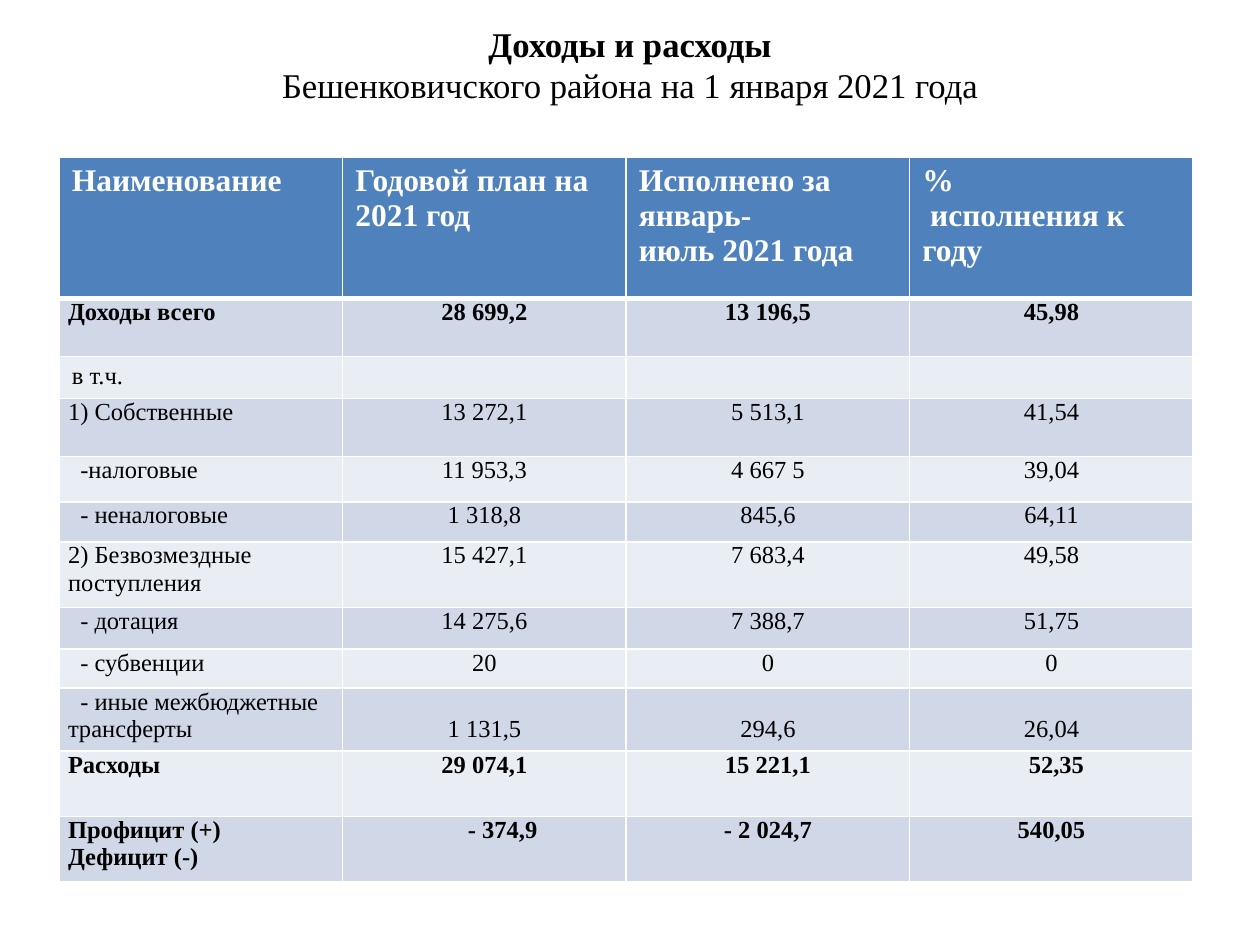
from lxml.etree import SubElement
from pptx import Presentation
from pptx.dml.color import RGBColor
from pptx.enum.text import MSO_ANCHOR as Anchor, PP_ALIGN as Align
from pptx.oxml.ns import qn
from pptx.util import Inches, Pt

BLACK = RGBColor(0x00, 0x00, 0x00)
WHITE = RGBColor(0xFF, 0xFF, 0xFF)
HEADER_BLUE = RGBColor(0x4F, 0x81, 0xBD)
BAND_DARK = RGBColor(0xD0, 0xD8, 0xE8)
BAND_LIGHT = RGBColor(0xE9, 0xED, 0xF4)

TITLE = ["Доходы и расходы", "Бешенковичского района на 1 января 2021 года"]
HEADER = ["Наименование", "Годовой план на 2021 год",
          "Исполнено за январь-\nиюль 2021 года", "%\nисполнения к году"]
# Row height in inches, then the four cell texts
ROWS = [
    (0.46, "Доходы всего", "28 699,2", "13 196,5", "45,98"),
    (0.31, "в т.ч.", "", "", ""),
    (0.46, "1) Собственные", "13 272,1", "5 513,1", "41,54"),
    (0.36, "-налоговые", "11 953,3", "4 667 5", "39,04"),
    (0.32, "- неналоговые", "1 318,8", "845,6", "64,11"),
    (0.52, "2) Безвозмездные поступления", "15 427,1", "7 683,4", "49,58"),
    (0.33, "- дотация", "14 275,6", "7 388,7", "51,75"),
    (0.31, "- субвенции", "20", "0", "0"),
    (0.5, "- иные межбюджетные трансферты", "1 131,5", "294,6", "26,04"),
    (0.52, "Расходы", "29 074,1", "15 221,1", "52,35"),
    (0.52, "Профицит (+)\nДефицит (-)", "- 374,9", "- 2 024,7", "540,05"),
]
HEADER_HEIGHT = 1.12
BOLD_ROWS = {"Доходы всего", "Расходы", "Профицит (+)\nДефицит (-)"}
SUBTITLE_ROW = "в т.ч."
LOW_ROW = "- иные межбюджетные трансферты"
# Left-aligned figures and their first-line indents in points
INDENTED_FIGURES = {"52,35": 63, "- 374,9": 66.5}


class SlideBuilder:
    font = "Times New Roman"

    def __init__(self, presentation):
        self.width = presentation.slide_width
        self.height = presentation.slide_height
        self.slide = presentation.slides.add_slide(presentation.slide_layouts[6])

    def box(self, left, top, width, height):
        """Turn shares of the slide into lengths."""
        return (round(left * self.width), round(top * self.height),
                round(width * self.width), round(height * self.height))

    def format(self, paragraph, size, color, bold, align=Align.LEFT, indent=0):
        paragraph.alignment = align
        if indent:
            paragraph._p.get_or_add_pPr().set("indent", str(Pt(indent)))
        for run in paragraph.runs:
            run.font.name = self.font
            run.font.size = Pt(size)
            run.font.bold = bold
            run.font.color.rgb = color

    def title(self, lines, *shares):
        frame = self.slide.shapes.add_textbox(*self.box(*shares)).text_frame
        frame.word_wrap = True
        frame.vertical_anchor = Anchor.MIDDLE
        frame.margin_top, frame.margin_bottom = 0, Inches(0.3)
        frame.text = "\n".join(lines)
        for index, paragraph in enumerate(frame.paragraphs):
            self.format(paragraph, 19.8, BLACK, index == 0, Align.CENTER)

    def table(self, heights, columns, *shares):
        frame = self.slide.shapes.add_table(len(heights), columns, *self.box(*shares))
        for row, height in zip(frame.table.rows, heights):
            row.height = Inches(height)
        return frame.table

    def cell(self, cell, text, fill, bottom_line=1):
        cell.text = text
        cell.fill.solid()
        cell.fill.fore_color.rgb = fill
        # Borders stand before the fill in the cell properties
        properties = cell._tc.get_or_add_tcPr()
        for position, (side, width) in enumerate(
                [("L", 1), ("R", 1), ("T", 1), ("B", bottom_line)]):
            line = SubElement(properties, qn(f"a:ln{side}"), w=str(Pt(width)))
            solid = SubElement(line, qn("a:solidFill"))
            SubElement(solid, qn("a:srgbClr"), val=str(WHITE))
            properties.insert(position, line)

    def header_cell(self, cell, text):
        self.cell(cell, text, HEADER_BLUE, bottom_line=3)
        for paragraph in cell.text_frame.paragraphs:
            indent = 4.5 if paragraph.text.startswith("исполнения") else 0
            self.format(paragraph, 18, WHITE, True, indent=indent)

    def body_cell(self, cell, text, fill, column, row_name):
        self.cell(cell, text, fill)
        if text != SUBTITLE_ROW:
            cell.margin_left = cell.margin_right = Inches(0.07)
            cell.margin_top = cell.margin_bottom = 0
        if column and row_name == LOW_ROW:
            cell.margin_top = Inches(0.22)
        indent = INDENTED_FIGURES.get(text, 7 if text.startswith("-") and not column else 0)
        centered = column and text not in INDENTED_FIGURES
        align = Align.CENTER if centered else Align.LEFT
        for paragraph in cell.text_frame.paragraphs:
            self.format(paragraph, 14, BLACK, row_name in BOLD_ROWS, align,
                        0 if centered else indent)


def main():
    presentation = Presentation()
    presentation.slide_width, presentation.slide_height = Inches(10), Inches(7.5)
    builder = SlideBuilder(presentation)

    # Title
    builder.title(TITLE, 0.05, 0.04, 0.9, 0.096)

    # Budget table: header, then banded rows
    heights = [HEADER_HEIGHT] + [row[0] for row in ROWS]
    table = builder.table(heights, len(HEADER), 0.047, 1 / 6, 0.9, sum(heights) / 7.5)
    for column, text in enumerate(HEADER):
        builder.header_cell(table.cell(0, column), text)
    for number, (_, *texts) in enumerate(ROWS, start=1):
        fill = BAND_DARK if number % 2 else BAND_LIGHT
        for column, text in enumerate(texts):
            builder.body_cell(table.cell(number, column), text, fill, column, texts[0])

    presentation.save("out.pptx")


if __name__ == "__main__":
    main()
